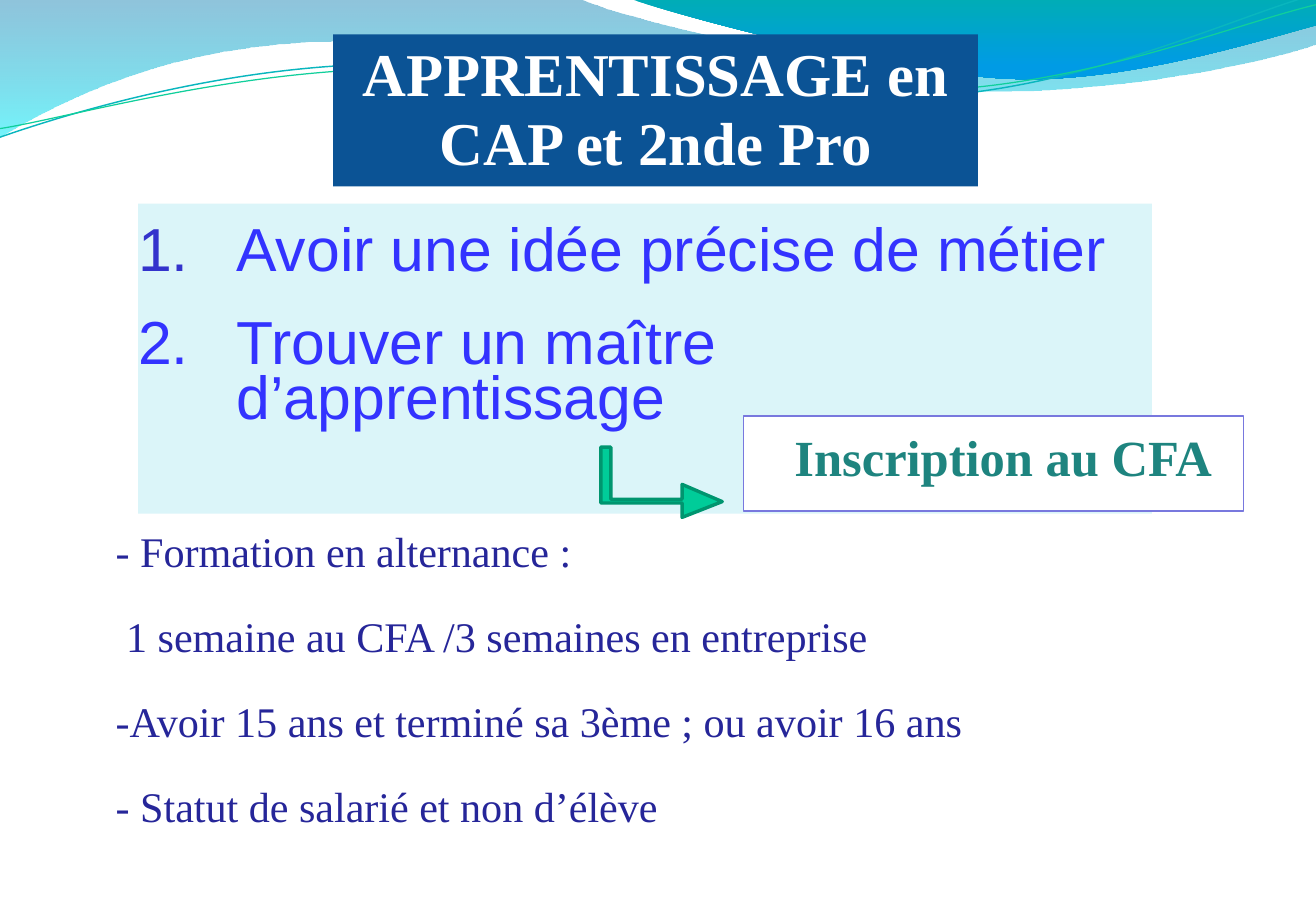
from lxml import etree
from pptx import Presentation
from pptx.dml.color import RGBColor
from pptx.enum.shapes import MSO_SHAPE
from pptx.enum.text import MSO_ANCHOR, PP_ALIGN
from pptx.oxml import parse_xml
from pptx.oxml.ns import nsdecls, qn
from pptx.util import Cm, Pt

COLORS = {
    "title_fill": "0B5395", "white": "FFFFFF", "steps_fill": "DBF5F9",
    "step": "3333FF", "number": "3333CC", "enrol": "1E847F",
    "enrol_line": "7878DE", "arrow": "00CC99", "arrow_line": "00956F",
    "details": "262699", "teal_line": "09B6BE", "green_line": "10CF9B",
    "pale_top": "0079AF", "pale_bottom": "00EBF8",
    "bright_top": "00ADB6", "bright_bottom": "009BE5",
}
SERIF, SANS = "Times New Roman", "Arial"

TITLE = "APPRENTISSAGE en CAP et 2nde Pro"
STEPS = [("Avoir une idée précise de métier", "number"),
         ("Trouver un maître d’apprentissage", "step")]
ENROL = "Inscription au CFA"
DETAILS = [("- Formation en alternance :", 0),
           ("1 semaine au CFA /3 semaines en entreprise", 0.22),
           ("-Avoir 15 ans et terminé sa 3ème ; ou avoir 16 ans", 0),
           ("- Statut de salarié et non d’élève", 0)]

# Outlines in centimetres: a pair is a corner, three pairs are a Bézier curve.
PALE_WAVE = [
    (0, -0.03), (12.12, -0.03),
    ((13.08, 0.43), (18.26, 1.6), (20.88, 1.6)),
    ((23.47, 1.6), (26.37, 0.66), (27.53, 0.23)),
    (27.56, 0.91),
    ((27.08, 1.12), (23.93, 1.93), (20.52, 1.91)),
    ((17.12, 1.91), (10.52, 0.71), (7.09, 0.86)),
    ((3.56, 0.89), (1.27, 2.11), (-0.03, 2.87)),
]
BRIGHT_WAVE = [
    (13.18, -0.03),
    ((14.02, 0.28), (18.77, 1.57), (21.16, 1.65)),
    ((23.55, 1.75), (26.47, 0.81), (27.53, 0.53)),
    (27.53, 0),
]
WAVES = [  # outline, gradient stops (position, colour, opacity in %)
    (PALE_WAVE, [(0, "pale_top", 44), (100, "pale_bottom", 55)]),
    (BRIGHT_WAVE, [(0, "bright_top", 100), (80, "bright_bottom", 100),
                   (100, "bright_bottom", 100)]),
]
RIPPLES = [  # outline, colour, width
    ([(0, 2.87), ((1.32, 2.41), (4.34, 1.47), (7.62, 1.35)),
      ((10.87, 1.19), (16.31, 2.24), (19.61, 2.01)),
      ((22.91, 1.75), (25.83, 0.36), (27.46, -0.1))], "teal_line", 0.85),
    ([(0, 2.69), ((1.3, 2.49), (4.5, 1.57), (7.8, 1.45)),
      ((11.07, 1.32), (16.43, 2.11), (19.74, 1.88)),
      ((23.01, 1.68), (25.91, 0.48), (27.53, 0.1))], "green_line", 0.75),
]
ARROW = [(15.11, 10.49), (14.27, 10.13), (14.27, 10.44), (12.78, 10.44),
         (12.78, 9.35), (12.57, 9.35), (12.57, 10.52), (14.27, 10.52),
         (14.27, 10.82)]


def rgb(name):
    return RGBColor.from_string(COLORS[name])


def paint(shape, fill=None, line=None, width=0.75):
    shape.shadow.inherit = False
    if fill:
        shape.fill.solid()
        shape.fill.fore_color.rgb = rgb(fill)
    else:
        shape.fill.background()
    if line:
        shape.line.color.rgb = rgb(line)
        shape.line.width = Pt(width)
    else:
        shape.line.fill.background()


def add_outline(slide, outline, close=True):
    """Draw the outline, joining each three curve points into one Bézier curve."""
    parts = [part if isinstance(part[0], tuple) else (part,) for part in outline]
    points = [(Cm(x), Cm(y)) for part in parts for x, y in part]
    builder = slide.shapes.build_freeform(*points[0], scale=1.0)
    builder.add_line_segments(points[1:], close=close)
    shape = builder.convert_to_shape()
    segments = iter(list(shape.element.iter(qn("a:lnTo"))))
    for part in parts[1:]:
        lines = [next(segments) for _ in part]
        if len(lines) == 3:
            curve = etree.Element(qn("a:cubicBezTo"))
            lines[0].addprevious(curve)
            for line in lines:
                curve.append(line[0])
                line.getparent().remove(line)
    return shape


def fill_downwards(shape, stops):
    """Replace the fill by a top-to-bottom gradient with opacity."""
    stop_xml = "".join(
        f'<a:gs pos="{position * 1000}"><a:srgbClr val="{COLORS[color]}">'
        f'<a:alpha val="{opacity * 1000}"/></a:srgbClr></a:gs>'
        for position, color, opacity in stops)
    gradient = parse_xml(f'<a:gradFill {nsdecls("a")} rotWithShape="1"><a:gsLst>{stop_xml}'
                         '</a:gsLst><a:lin ang="5400000" scaled="0"/></a:gradFill>')
    properties = shape.element.spPr
    properties.replace(properties.find(qn("a:noFill")), gradient)


def prepare_frame(shape, insets, anchor=MSO_ANCHOR.TOP):
    frame = shape.text_frame
    frame.word_wrap = True
    frame.vertical_anchor = anchor
    horizontal, vertical = map(Cm, insets)
    frame.margin_left = frame.margin_right = horizontal
    frame.margin_top = frame.margin_bottom = vertical
    return frame


def add_box(slide, place, insets, anchor=MSO_ANCHOR.TOP, **colors):
    shape = slide.shapes.add_shape(MSO_SHAPE.RECTANGLE, *map(Cm, place))
    paint(shape, **colors)
    return prepare_frame(shape, insets, anchor)


def write(frame, index, text, font, size, color, spacing, align=PP_ALIGN.LEFT,
          bold=False, before=0, left=0, hanging=0, number_color=None):
    paragraph = frame.add_paragraph() if index else frame.paragraphs[0]
    paragraph.text = text
    paragraph.alignment = align
    paragraph.line_spacing = spacing
    if index:
        paragraph.space_before = Pt(before)
    properties = paragraph._p.get_or_add_pPr()
    properties.set("marL", str(Cm(left)))
    properties.set("indent", str(-Cm(hanging)))
    if number_color:
        bullet_color = etree.SubElement(properties, qn("a:buClr"))
        etree.SubElement(bullet_color, qn("a:srgbClr"), val=COLORS[number_color])
        etree.SubElement(properties, qn("a:buFont"), typeface=font)
        etree.SubElement(properties, qn("a:buAutoNum"), type="arabicPeriod")
    paragraph.font.name = font
    paragraph.font.size = Pt(size)
    paragraph.font.bold = bold
    paragraph.font.color.rgb = rgb(color)


def main():
    presentation = Presentation()
    presentation.slide_width, presentation.slide_height = Cm(27.53), Cm(19.05)
    slide = presentation.slides.add_slide(presentation.slide_layouts[6])

    for outline, stops in WAVES:
        wave = add_outline(slide, outline)
        paint(wave)
        fill_downwards(wave, stops)
    for outline, color, width in RIPPLES:
        paint(add_outline(slide, outline, close=False), line=color, width=width)

    steps = add_box(slide, (2.89, 4.26, 21.21, 6.48), (0, 0.5), fill="steps_fill")
    for index, (text, number_color) in enumerate(STEPS):
        write(steps, index, text, SANS, 36, "step", 0.76, before=22,
              left=2.06, hanging=2.06, number_color=number_color)

    enrol = add_box(slide, (15.56, 8.7, 10.45, 1.99), (0, 0.5),
                    fill="white", line="enrol_line")
    write(enrol, 0, ENROL, SERIF, 30, "enrol", 0.76, bold=True, left=1.06)

    paint(add_outline(slide, ARROW), fill="arrow", line="arrow_line", width=2)

    details_box = slide.shapes.add_textbox(Cm(2.17), Cm(10.93), Cm(23.8), Cm(6.78))
    details = prepare_frame(details_box, (0.25, 0.13))
    for index, (text, left) in enumerate(DETAILS):
        write(details, index, text, SERIF, 25, "details", 0.95,
              align=PP_ALIGN.JUSTIFY, before=22, left=left)

    title = add_box(slide, (6.97, 0.72, 13.49, 3.18), (0.25, 0.13),
                    anchor=MSO_ANCHOR.MIDDLE, fill="title_fill")
    write(title, 0, TITLE, SERIF, 36, "white", 0.95, align=PP_ALIGN.CENTER, bold=True)

    presentation.save("out.pptx")


if __name__ == "__main__":
    main()
